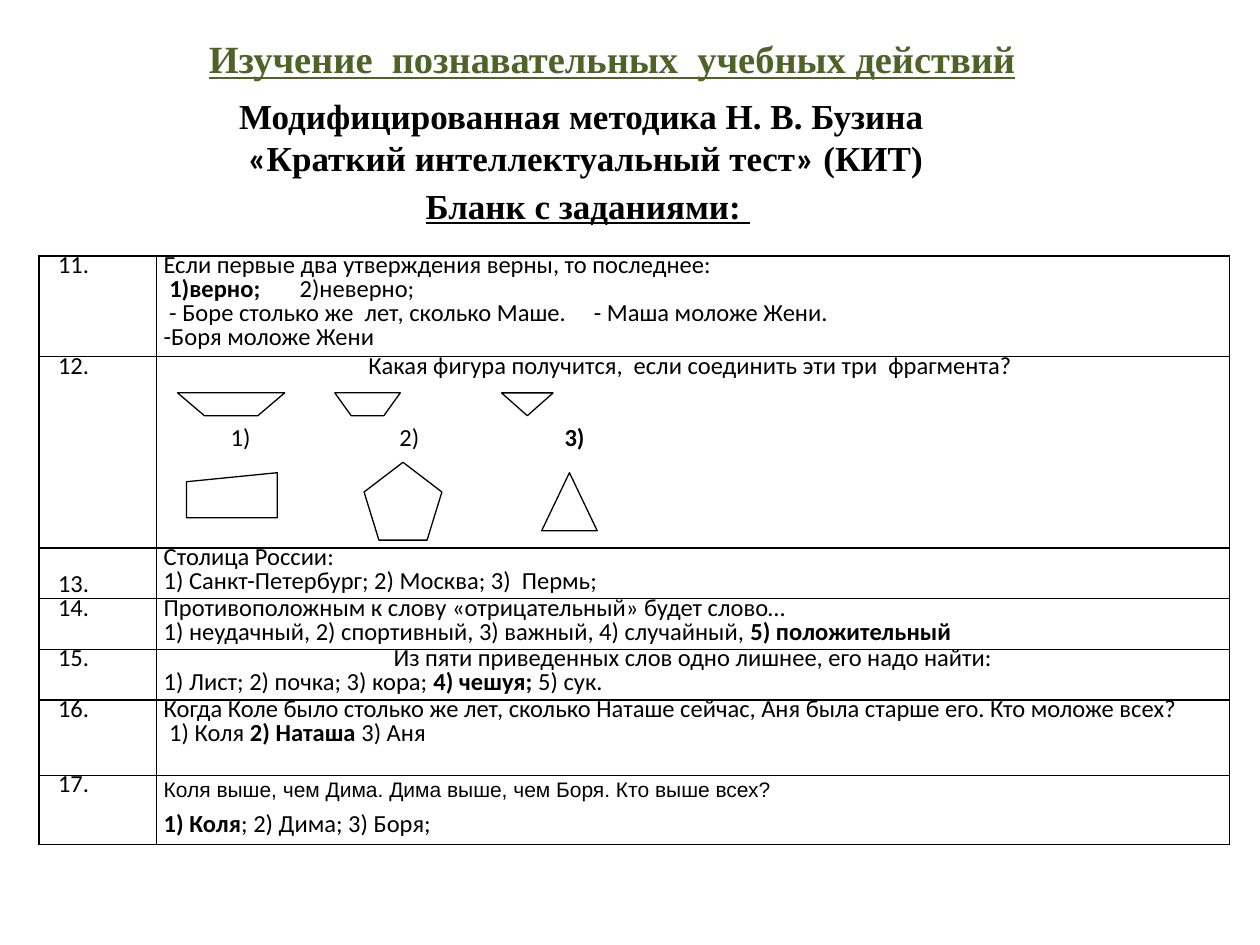
from lxml import etree
from pptx import Presentation
from pptx.dml.color import RGBColor
from pptx.enum.shapes import MSO_SHAPE
from pptx.enum.text import MSO_ANCHOR, PP_ALIGN
from pptx.oxml.ns import qn
from pptx.util import Cm, Pt

BLACK = RGBColor(0x00, 0x00, 0x00)
WHITE = RGBColor(0xFF, 0xFF, 0xFF)
GREEN = RGBColor(0x4F, 0x62, 0x28)
TRIANGLE = MSO_SHAPE.ISOSCELES_TRIANGLE
PENTAGON = MSO_SHAPE.REGULAR_PENTAGON
SLANT = MSO_SHAPE.FLOWCHART_MANUAL_INPUT
MIDDLE, BOTTOM = MSO_ANCHOR.MIDDLE, MSO_ANCHOR.BOTTOM
CENTER = PP_ALIGN.CENTER
SERIF, SANS, BODY = "Times New Roman", "Arial", "Calibri"

prs = Presentation()
prs.slide_width, prs.slide_height = Cm(25.4), Cm(19.05)
slide = prs.slides.add_slide(prs.slide_layouts[6])
shapes = slide.shapes


def write(par, text, size=14, font=BODY):
    """Fill a paragraph; parts between asterisks are bold."""
    for i, part in enumerate(text.split("*")):
        if part:
            run = par.add_run()
            run.text = part
            run.font.size, run.font.name = Pt(size), font
            run.font.bold = i % 2 == 1
            run.font.color.rgb = BLACK


def outline(shape):
    shape.shadow.inherit = False
    shape.fill.solid()
    shape.fill.fore_color.rgb = WHITE
    shape.line.color.rgb = BLACK
    shape.line.width = Pt(0.75)


# Headings: left, top, width, height, size, colour, underline, wrap, lines
heads = [
    (3.96, 0.58, 16.94, 1.19, 22, GREEN, True, False,
     [["Изучение  познавательных  учебных действий"]]),
    (4.57, 1.78, 14.88, 1.96, 20, BLACK, False, True,
     [["Модифицированная методика Н. В. Бузина"],
      [" ", "«", "Краткий интеллектуальный тест", "»", " (КИТ)"]]),
    (8.33, 3.58, 7.09, 1.12, 20, BLACK, True, False,
     [["Бланк с заданиями: "]]),
]
for left, top, width, height, size, color, under, wrap, lines in heads:
    box = shapes.add_textbox(Cm(left), Cm(top), Cm(width), Cm(height))
    frame = box.text_frame
    frame.word_wrap = wrap
    frame.vertical_anchor = MIDDLE
    for i, parts in enumerate(lines):
        par = frame.add_paragraph() if i else frame.paragraphs[0]
        for part in parts:
            write(par, f"*{part}*", size, BODY if part in "«»" else SERIF)
        for run in par.runs:
            run.font.color.rgb = color
            run.font.underline = under

# Tasks: number, row height, lines
tasks = [
    ("11.", 2.03, ["Если первые два утверждения верны, то последнее:",
                   " *1)верно;*\t2)неверно;",
                   " - Боре столько же  лет, сколько Маше.\t- Маша моложе Жени.",
                   "-Боря моложе Жени"]),
    ("12.", 3.86, ["Какая фигура получится,  если соединить эти три  фрагмента? ",
                   "\t1)\t2)\t*3)*"]),
    ("13.", 1.02, ["Столица России:",
                   "1) Санкт-Петербург; 2) Москва; 3)  Пермь;"]),
    ("14.", 1.02, ["Противоположным к слову «отрицательный» будет слово…",
                   "1) неудачный, 2) спортивный, 3) важный, 4) случайный, "
                   "*5) положительный*"]),
    ("15.", 1.02, ["Из пяти приведенных слов одно лишнее, его надо найти:",
                   "1) Лист; 2) почка; 3) кора; *4) чешуя;* 5) сук."]),
    ("16.", 1.52, ["Когда Коле было столько же лет, сколько Наташе сейчас, "
                   "Аня была старше его. Кто моложе всех?",
                   " 1) Коля *2) Наташа* 3) Аня"]),
    ("17.", 1.4, ["Коля выше, чем Дима. Дима выше, чем Боря. Кто выше всех?",
                  "*1) Коля*; 2) Дима; 3) Боря;"]),
]
# Tab stops by (number, line)
tabs = {("11.", 1): [2.74], ("11.", 2): [8.67], ("12.", 1): [1.35, 4.75, 8.08]}

# Table
total = sum(task[1] for task in tasks)
table = shapes.add_table(len(tasks), 2, Cm(0.79), Cm(5.16), Cm(24), Cm(total)).table
table.first_row = table.horz_banding = False
table.columns[0].width, table.columns[1].width = Cm(2.36), Cm(21.64)
for row, (num, height, lines) in zip(table.rows, tasks):
    row.height = Cm(height)
    for cell, texts, inset in zip(row.cells, ([num], lines), (0.38, 0.15)):
        cell.margin_left, cell.margin_right = Cm(inset), Cm(0.15)
        cell.margin_top = cell.margin_bottom = 0
        for i, text in enumerate(texts):
            par = cell.text_frame.add_paragraph() if i else cell.text_frame.paragraphs[0]
            par.line_spacing = Pt(13.7)
            if texts is lines and (num, i) in tabs:
                stops = etree.SubElement(par._p.get_or_add_pPr(), qn("a:tabLst"))
                for stop in tabs[num, i]:
                    etree.SubElement(stops, qn("a:tab"), pos=str(Cm(stop)), algn="l")
            if texts is lines and i == 0 and num == "17.":
                par.line_spacing, par.space_after = 1.15, Pt(7.5)
                write(par, text, 12, SANS)
            else:
                write(par, text)
        # Borders
        props = cell._tc.get_or_add_tcPr()
        for side in ("lnL", "lnR", "lnT", "lnB"):
            edge = etree.SubElement(props, qn(f"a:{side}"), w=str(Pt(1)))
            solid = etree.SubElement(edge, qn("a:solidFill"))
            etree.SubElement(solid, qn("a:srgbClr"), val=str(BLACK))
        cell.fill.background()

# Exceptions: centred questions, room for figures, low number
for r in (1, 4):
    table.cell(r, 1).text_frame.paragraphs[0].alignment = CENTER
table.cell(1, 1).text_frame.paragraphs[1].space_before = Pt(27.4)
table.cell(2, 0).vertical_anchor = BOTTOM

# Trapezoid fragments: left, width, slant
for left, width, slant in ((3.58, 2.16, 0.54), (6.75, 1.32, 0.33)):
    top, low, right = Cm(7.92), Cm(8.38), left + width
    path = shapes.build_freeform(Cm(left), top)
    path.add_line_segments([(Cm(left + slant), low), (Cm(right - slant), low),
                            (Cm(right), top)], close=True)
    outline(path.convert_to_shape())

# Third fragment and the answer figures
figures = [
    (TRIANGLE, 10.11, 7.92, 1.04, 0.46, 180),
    (TRIANGLE, 10.92, 9.53, 1.12, 1.17, 0),
    (PENTAGON, 7.34, 9.32, 1.57, 1.57, 0),
    (SLANT, 3.76, 9.53, 1.83, 0.91, 0),
]
for kind, left, top, width, height, turn in figures:
    figure = shapes.add_shape(kind, Cm(left), Cm(top), Cm(width), Cm(height))
    figure.rotation = turn
    outline(figure)

prs.save("out.pptx")
